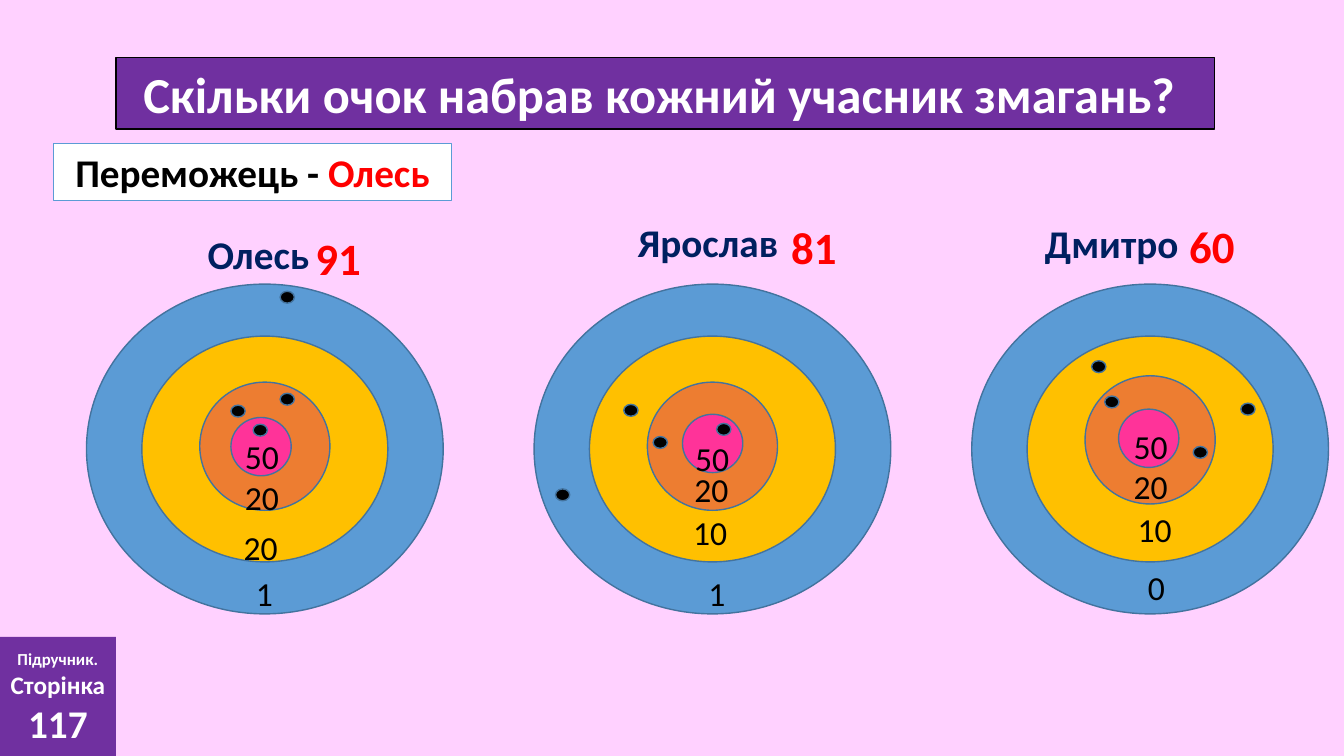
from pptx import Presentation
from pptx.dml.color import RGBColor
from pptx.enum.shapes import MSO_SHAPE
from pptx.enum.text import MSO_ANCHOR, PP_ALIGN
from pptx.util import Cm, Pt

COLORS = {
    "background": "FFD1FF", "purple": "7030A0", "white": "FFFFFF",
    "black": "000000", "red": "FF0000", "navy": "002060",
    "blue": "5B9BD5", "outline": "43739E", "yellow": "FFC000",
    "orange": "ED7D31", "pink": "FF3399",
}
FONT = "Calibri"

# Sizes in centimetres: width, height
OUTER, MIDDLE, INNER, CENTER = (8.99, 8.31), (6.2, 5.69), (3.28, 3.23), (1.52, 1.47)
HOLE, LABEL, NAME, SCORE = (0.36, 0.3), (2.11, 1.27), (4.57, 1.45), (2.11, 1.63)
TARGET_TOP = 7.16

# Places in centimetres: left, top
TARGETS = [
    {
        "left": 2.18, "inner_top": 9.63, "center": (5.82, 10.52),
        "name": ("Олесь ", 4.34, 5.69), "score": ("91", 7.7, 5.69),
        "labels": [("1", 6.2, 14.3), ("20", 5.89, 13.16),
                   ("20", 5.92, 11.89), ("50", 5.92, 10.87)],
        "holes": [(5.82, 10.21), (7.06, 9.91), (6.38, 10.69), (7.06, 7.34)],
    },
    {
        "left": 13.46, "inner_top": 9.63, "center": (17.2, 10.44),
        "name": ("Ярослав ", 15.67, 5.38), "score": ("81", 19.69, 5.41),
        "labels": [("1", 17.6, 14.3), ("10", 17.22, 12.78),
                   ("20", 17.25, 11.68), ("50", 17.27, 10.92)],
        "holes": [(14.0, 12.32), (15.72, 10.19), (18.06, 10.67), (16.46, 11.0)],
    },
    {
        "left": 24.49, "inner_top": 9.47, "center": (28.19, 10.31),
        "name": ("Дмитро", 25.73, 5.41), "score": ("60", 29.72, 5.38),
        "labels": [("0", 28.68, 14.15), ("10", 28.42, 12.7),
                   ("20", 28.32, 11.61), ("50", 28.32, 10.62)],
        "holes": [(27.84, 9.98), (30.07, 11.25), (27.51, 9.09), (31.27, 10.16)],
    },
]


def color(name):
    return RGBColor.from_string(COLORS[name])


def add_figure(page, kind, place, size, fill, line=None):
    shape = page.shapes.add_shape(kind, *map(Cm, place + size))
    shape.shadow.inherit = False
    shape.fill.solid()
    shape.fill.fore_color.rgb = color(fill)
    if line:
        shape.line.color.rgb = color(line)
        shape.line.width = Pt(1)
    else:
        shape.line.fill.background()
    return shape


def add_oval(page, place, size, fill):
    add_figure(page, MSO_SHAPE.OVAL, place, size, fill, "outline")


def style(para, size, ink, bold=True, align=PP_ALIGN.CENTER):
    para.alignment = align
    para.font.name = FONT
    para.font.size = Pt(size)
    para.font.bold = bold
    para.font.color.rgb = color(ink)


def add_text(page, item, box_size, size, ink, bold=True, align=PP_ALIGN.LEFT):
    text, left, top = item
    frame = page.shapes.add_textbox(*map(Cm, (left, top) + box_size)).text_frame
    frame.word_wrap = True
    frame.text = text
    style(frame.paragraphs[0], size, ink, bold, align)


def add_target(page, target):
    left = target["left"]
    # Rings share one vertical axis
    add_oval(page, (left, TARGET_TOP), OUTER, "blue")
    middle = (left + (OUTER[0] - MIDDLE[0]) / 2, TARGET_TOP + (OUTER[1] - MIDDLE[1]) / 2)
    add_oval(page, middle, MIDDLE, "yellow")
    add_oval(page, (left + (OUTER[0] - INNER[0]) / 2, target["inner_top"]), INNER, "orange")
    add_oval(page, target["center"], CENTER, "pink")
    # Ring values, shots, name and score
    for label in target["labels"]:
        add_text(page, label, LABEL, 24, "black", bold=False)
    for hole in target["holes"]:
        add_oval(page, hole, HOLE, "black")
    add_text(page, target["name"], NAME, 28, "navy", align=PP_ALIGN.CENTER)
    add_text(page, target["score"], SCORE, 32, "red")


def add_title(page):
    box = add_figure(page, MSO_SHAPE.RECTANGLE, (2.92, 1.45), (27.69, 1.8), "purple", "black")
    box.text_frame.text = "Скільки очок набрав кожний учасник змагань? "
    style(box.text_frame.paragraphs[0], 36, "white")


def add_winner(page):
    box = add_figure(page, MSO_SHAPE.RECTANGLE, (1.35, 3.61), (10.03, 1.45), "white", "blue")
    box.text_frame.vertical_anchor = MSO_ANCHOR.TOP
    para = box.text_frame.paragraphs[0]
    style(para, 28, "black")
    for text, ink in (("Переможець - ", "black"), ("Олесь", "red")):
        span = para.add_run()
        span.text = text
        span.font.color.rgb = color(ink)


def add_page_reference(page):
    box = add_figure(page, MSO_SHAPE.RECTANGLE, (0, 16.05), (2.92, 3.05), "purple")
    frame = box.text_frame
    frame.margin_left = frame.margin_right = 0
    frame.text = "Підручник.\nСторінка\n117"
    for para, size in zip(frame.paragraphs, (12, 18, 28)):
        style(para, size, "white")


def main():
    deck = Presentation()
    deck.slide_width, deck.slide_height = Cm(33.87), Cm(19.05)
    page = deck.slides.add_slide(deck.slide_layouts[6])
    page.background.fill.solid()
    page.background.fill.fore_color.rgb = color("background")
    add_title(page)
    for target in TARGETS:
        add_target(page, target)
    add_winner(page)
    add_page_reference(page)
    deck.save("out.pptx")


if __name__ == "__main__":
    main()
